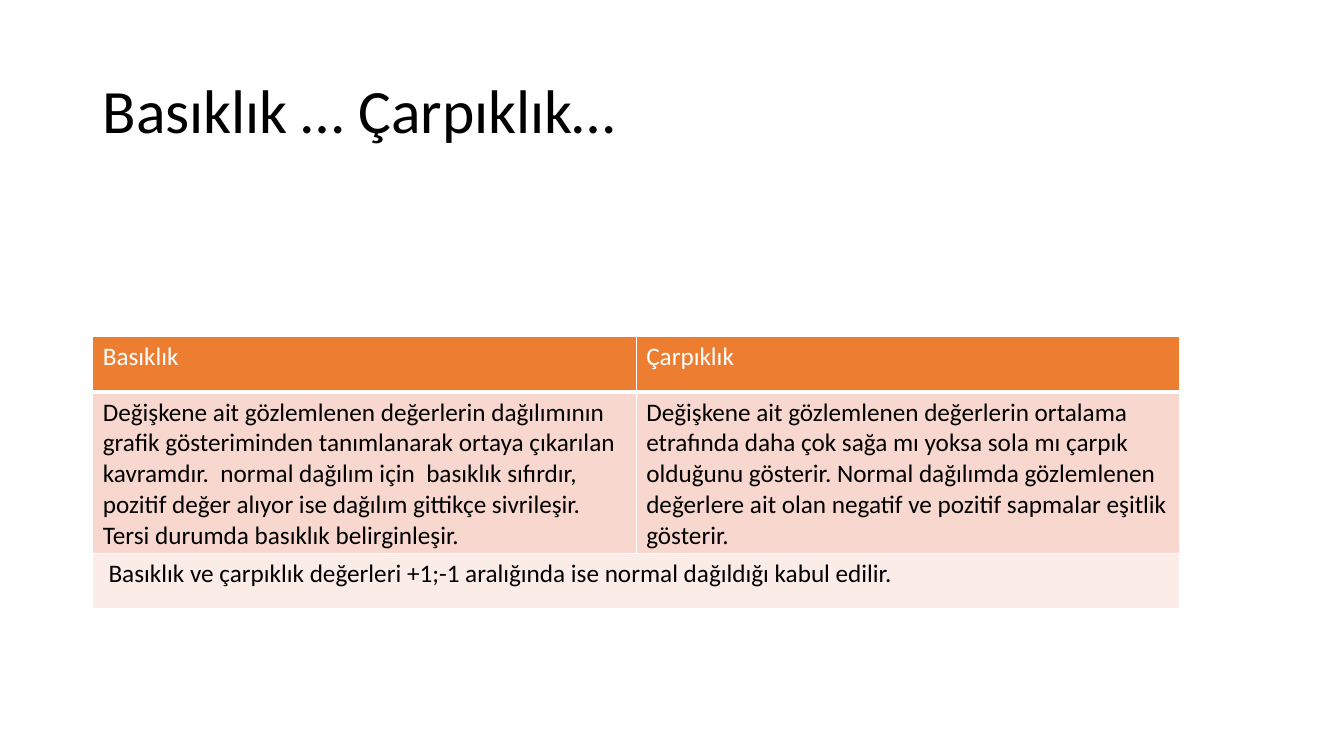
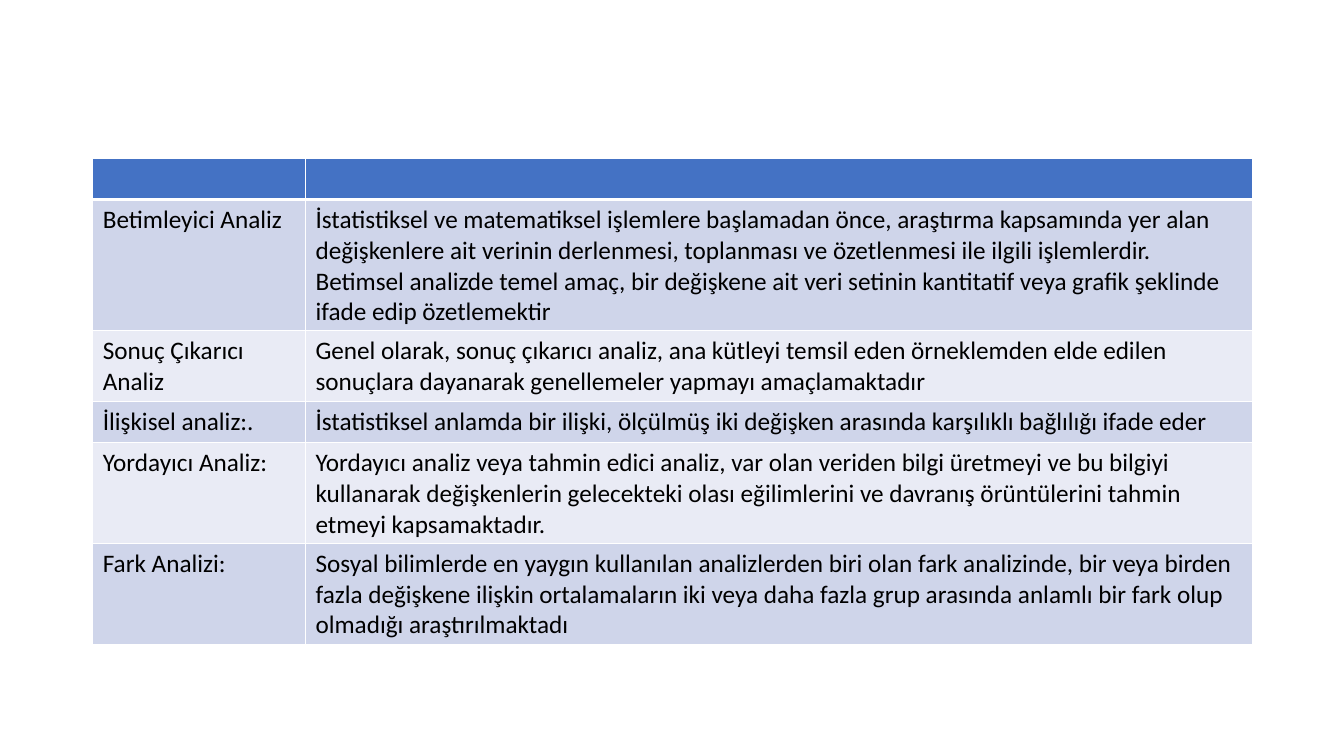
"""Build two slides of tables on distribution shape and kinds of analysis."""
from lxml.etree import SubElement
from pptx import Presentation
from pptx.dml.color import RGBColor as Rgb
from pptx.enum.text import MSO_ANCHOR as Anchor
from pptx.oxml.ns import qn
from pptx.util import Inches, Pt

COLORS = {
    "text": "000000", "white": "FFFFFF",
    "orange": "ED7D31", "orange band": "F8D7CE", "orange pale": "FCECE8",
    "blue": "4472C4", "blue band": "CFD5EA", "blue pale": "E9EBF5",
}
FONT = "Calibri"
MARGIN, CONTENT_WIDTH = 0.92, 11.5


def style_paragraph(paragraph, size, color):
    paragraph.font.name = FONT
    paragraph.font.size = Pt(size)
    paragraph.font.bold = False
    paragraph.font.color.rgb = Rgb.from_string(COLORS[color])


def add_banded_table(slide, top, column_widths, row_height, rows, hue):
    frame = slide.shapes.add_table(
        len(rows), len(column_widths), Inches(MARGIN), Inches(top),
        Inches(sum(column_widths)), Inches(row_height * len(rows)))
    table = frame.table
    for column, width in zip(table.columns, column_widths):
        column.width = Inches(width)
    for r, texts in enumerate(rows):
        table.rows[r].height = Inches(row_height)
        fill = hue if r == 0 else f"{hue} band" if r % 2 else f"{hue} pale"
        for c, text in enumerate(texts):
            cell = table.cell(r, c)
            cell.text = text
            style_paragraph(cell.text_frame.paragraphs[0], 18, "text" if r else "white")
            for side in "LRTB":
                weight = 3 if r == 0 and side == "B" else 1
                border = SubElement(cell._tc.get_or_add_tcPr(), qn(f"a:ln{side}"), w=str(Pt(weight)))
                SubElement(SubElement(border, qn("a:solidFill")), qn("a:srgbClr"), val=COLORS["white"])
            cell.fill.solid()
            cell.fill.fore_color.rgb = Rgb.from_string(COLORS[fill])
    return table


deck = Presentation()
deck.slide_width, deck.slide_height = Inches(13.33), Inches(7.5)
blank = deck.slide_layouts[6]

shape_slide = deck.slides.add_slide(blank)
title = shape_slide.shapes.add_textbox(
    Inches(MARGIN), Inches(0.4), Inches(CONTENT_WIDTH), Inches(1.45)).text_frame
title.word_wrap = True
title.vertical_anchor = Anchor.MIDDLE
title.text = "Basıklık … Çarpıklık…"
title.paragraphs[0].line_spacing = 0.9
style_paragraph(title.paragraphs[0], 44, "text")

shape_rows = [
    ("Basıklık", "Çarpıklık"),
    ("Değişkene ait gözlemlenen değerlerin dağılımının grafik gösteriminden tanımlanarak "
     "ortaya çıkarılan kavramdır.  normal dağılım için  basıklık sıfırdır, pozitif değer "
     "alıyor ise dağılım gittikçe sivrileşir.  Tersi durumda basıklık belirginleşir.",
     "Değişkene ait gözlemlenen değerlerin ortalama etrafında daha çok sağa mı yoksa sola mı "
     "çarpık olduğunu gösterir. Normal dağılımda gözlemlenen değerlere ait olan negatif ve "
     "pozitif sapmalar eşitlik gösterir."),
    (" Basıklık ve çarpıklık değerleri +1;-1 aralığında ise normal dağıldığı kabul edilir.", ""),
]
shape_table = add_banded_table(shape_slide, 3.34, [5.39] * 2, 0.55, shape_rows, "orange")
shape_table.cell(2, 0).merge(shape_table.cell(2, 1))

analysis_slide = deck.slides.add_slide(blank)
analysis_rows = [
    ("", ""),
    ("Betimleyici Analiz",
     "İstatistiksel ve matematiksel işlemlere başlamadan önce, araştırma kapsamında yer alan "
     "değişkenlere ait verinin derlenmesi, toplanması ve özetlenmesi ile ilgili işlemlerdir. "
     "Betimsel analizde temel amaç, bir değişkene ait veri setinin kantitatif veya grafik "
     "şeklinde ifade edip özetlemektir"),
    ("Sonuç Çıkarıcı Analiz",
     "Genel olarak, sonuç çıkarıcı analiz, ana kütleyi temsil eden örneklemden elde edilen "
     "sonuçlara dayanarak genellemeler yapmayı amaçlamaktadır"),
    ("İlişkisel analiz:.",
     "İstatistiksel anlamda bir ilişki, ölçülmüş iki değişken arasında karşılıklı bağlılığı ifade eder"),
    ("Yordayıcı Analiz:",
     "Yordayıcı analiz veya tahmin edici analiz, var olan veriden bilgi üretmeyi ve bu bilgiyi "
     "kullanarak değişkenlerin gelecekteki olası eğilimlerini ve davranış örüntülerini tahmin "
     "etmeyi kapsamaktadır."),
    ("Fark Analizi:",
     "Sosyal bilimlerde en yaygın kullanılan analizlerden biri olan fark analizinde, bir veya "
     "birden fazla değişkene ilişkin ortalamaların iki veya daha fazla grup arasında anlamlı "
     "bir fark olup olmadığı araştırılmaktadı"),
]
label_width = 2.11
add_banded_table(analysis_slide, 1.57, [label_width, CONTENT_WIDTH - label_width],
                 0.41, analysis_rows, "blue")

deck.save("out.pptx")
